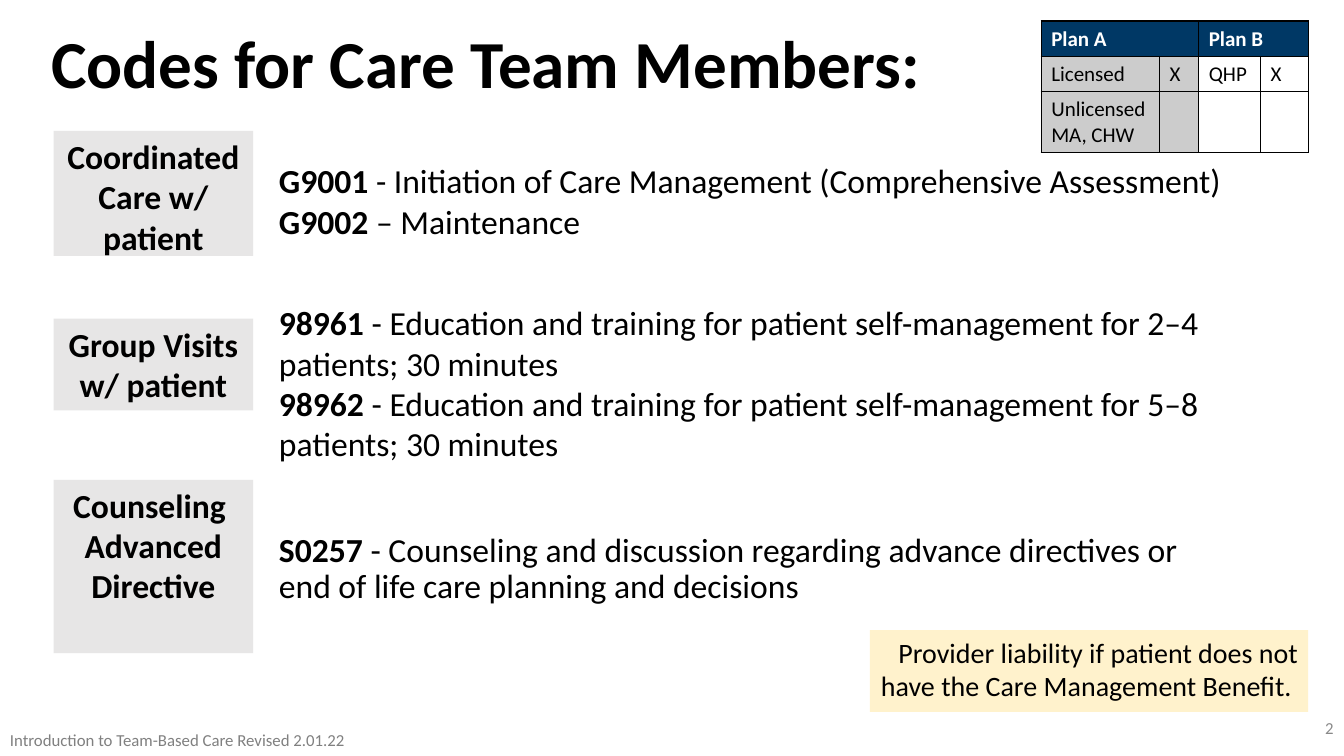
import pptx
import pptx.dml.color
import pptx.enum.shapes
import pptx.enum.text
import pptx.oxml
import pptx.oxml.ns
import pptx.util

Cm = pptx.util.Cm
RGBColor = pptx.dml.color.RGBColor
Align = pptx.enum.text.PP_ALIGN
Anchor = pptx.enum.text.MSO_ANCHOR

BLACK = RGBColor(0x00, 0x00, 0x00)
WHITE = RGBColor(0xFF, 0xFF, 0xFF)
NAVY = RGBColor(0x00, 0x38, 0x65)
LABEL_GRAY = RGBColor(0xE7, 0xE6, 0xE6)
CELL_GRAY = RGBColor(0xCC, 0xCC, 0xCC)
CREAM = RGBColor(0xFF, 0xF2, 0xCC)
NUMBER_GRAY = RGBColor(0x89, 0x89, 0x89)
FOOTER_GRAY = RGBColor(0x80, 0x80, 0x80)

LABEL_LEFT, LABEL_WIDTH, CODES_LEFT = 1.35, 5.03, 6.78
LABELS = [
    (3.3, 3.15, ["Coordinated Care w/ patient"]),
    (8.03, 2.31, ["Group Visits w/ patient"]),
    (12.09, 4.37, ["Counseling ", "Advanced Directive"]),
]
CODES = [
    (3.91, 25.76, 2.31, 1.0, [
        ("G9001", " - Initiation of Care Management (Comprehensive Assessment)"),
        ("G9002", " – Maintenance"),
    ]),
    (7.49, 25.07, 4.37, 1.0, [
        ("98961", " - Education and training for patient self-management for 2–4 patients; 30 minutes"),
        ("98962", " - Education and training for patient self-management for 5–8 patients; 30 minutes"),
    ]),
    (13.31, 23.47, 1.9, 0.9, [
        ("S0257", " - Counseling and discussion regarding advance directives or "
                  "end of life care planning and decisions"),
    ]),
]
COLUMN_WIDTHS = [2.98, 0.99, 1.56, 1.2]
ROW_HEIGHTS = [0.88, 0.88, 1.5]
COVERAGE = [
    ["Plan A", "", "Plan B", ""],
    ["Licensed", "X", "QHP", "X"],
    ["Unlicensed\nMA, CHW", "", "", ""],
]


def apply_format(target, values):
    """Set each named attribute on the target."""
    for name, value in values.items():
        setattr(target, name, value)


def add_run(paragraph, text, size, color=BLACK, bold=False):
    """Append one formatted run to a paragraph."""
    run = paragraph.add_run()
    run.text = text
    apply_format(run.font, {"name": "Calibri", "size": pptx.util.Pt(size), "bold": bold})
    run.font.color.rgb = color


def write_paragraphs(frame, lines, size, color=BLACK, bold=False, **paragraph_format):
    """Write lines, each a string or a bold code followed by its description."""
    frame.word_wrap = True
    for index, line in enumerate(lines):
        paragraph = frame.add_paragraph() if index else frame.paragraphs[0]
        apply_format(paragraph, paragraph_format)
        if isinstance(line, str):
            add_run(paragraph, line, size, color, bold)
        else:
            code, description = line
            add_run(paragraph, code, size, color, True)
            add_run(paragraph, description, size, color)


def add_text(slide, box, lines, size, anchor=Anchor.TOP, **formats):
    """Add a plain text box."""
    shape = slide.shapes.add_textbox(*map(Cm, box))
    shape.text_frame.vertical_anchor = anchor
    write_paragraphs(shape.text_frame, lines, size, **formats)


def add_panel(slide, box, fill, lines, size, **formats):
    """Add a filled rectangle with text and no outline."""
    shape = slide.shapes.add_shape(pptx.enum.shapes.MSO_SHAPE.RECTANGLE, *map(Cm, box))
    shape.shadow.inherit = False
    shape.fill.solid()
    shape.fill.fore_color.rgb = fill
    shape.line.fill.background()
    shape.text_frame.vertical_anchor = Anchor.TOP
    write_paragraphs(shape.text_frame, lines, size, **formats)


def style_cell(cell, fill):
    """Give a cell thin black borders and a solid fill."""
    properties = cell._tc.get_or_add_tcPr()
    for edge in ("lnL", "lnR", "lnT", "lnB"):
        properties.append(pptx.oxml.parse_xml(
            f'<a:{edge} {pptx.oxml.ns.nsdecls("a")} w="12700"><a:solidFill>'
            f'<a:srgbClr val="{BLACK}"/></a:solidFill></a:{edge}>'))
    cell.fill.solid()
    cell.fill.fore_color.rgb = fill


def add_coverage_table(slide):
    """Add the table of plans and eligible team members."""
    frame = slide.shapes.add_table(
        len(COVERAGE), len(COLUMN_WIDTHS), Cm(26.24), Cm(0.53),
        Cm(sum(COLUMN_WIDTHS)), Cm(sum(ROW_HEIGHTS)))
    table = frame.table
    for column, width in zip(table.columns, COLUMN_WIDTHS):
        column.width = Cm(width)
    for row, height in zip(table.rows, ROW_HEIGHTS):
        row.height = Cm(height)
    for start in (0, 2):
        table.cell(0, start).merge(table.cell(0, start + 1))
    for row_index, texts in enumerate(COVERAGE):
        header = row_index == 0
        for column_index, text in enumerate(texts):
            cell = table.cell(row_index, column_index)
            body_fill = CELL_GRAY if column_index < 2 else WHITE
            style_cell(cell, NAVY if header else body_fill)
            if text:
                write_paragraphs(cell.text_frame, text.split("\n"), 15,
                                 color=WHITE if header else BLACK, bold=header)


def main():
    """Build the slide of care team codes."""
    presentation = pptx.Presentation()
    apply_format(presentation, {"slide_width": Cm(33.87), "slide_height": Cm(19.05)})
    slide = presentation.slides.add_slide(presentation.slide_layouts[6])
    add_text(slide, (1.04, 0.64, 29.87, 1.83), ["Codes for Care Team Members:"], 48,
             anchor=Anchor.MIDDLE, bold=True)
    for top, height, lines in LABELS:
        add_panel(slide, (LABEL_LEFT, top, LABEL_WIDTH, height), LABEL_GRAY, lines, 24,
                  bold=True, alignment=Align.CENTER)
    for top, width, height, spacing, lines in CODES:
        add_text(slide, (CODES_LEFT, top, width, height), lines, 24, line_spacing=spacing)
    add_panel(slide, (21.92, 15.88, 11.05, 2.06), CREAM,
              ["Provider liability if patient does not have the Care Management Benefit. "], 20,
              alignment=Align.RIGHT)
    add_text(slide, (26.24, 18.01, 7.62, 1.02), ["2"], 12, color=NUMBER_GRAY,
             alignment=Align.RIGHT, line_spacing=0.9)
    add_coverage_table(slide)
    add_text(slide, (0, 18.26, 13.34, 0.76),
             ["Introduction to Team-Based Care Revised 2.01.22"], 12, color=FOOTER_GRAY)
    presentation.save("out.pptx")


if __name__ == "__main__":
    main()
